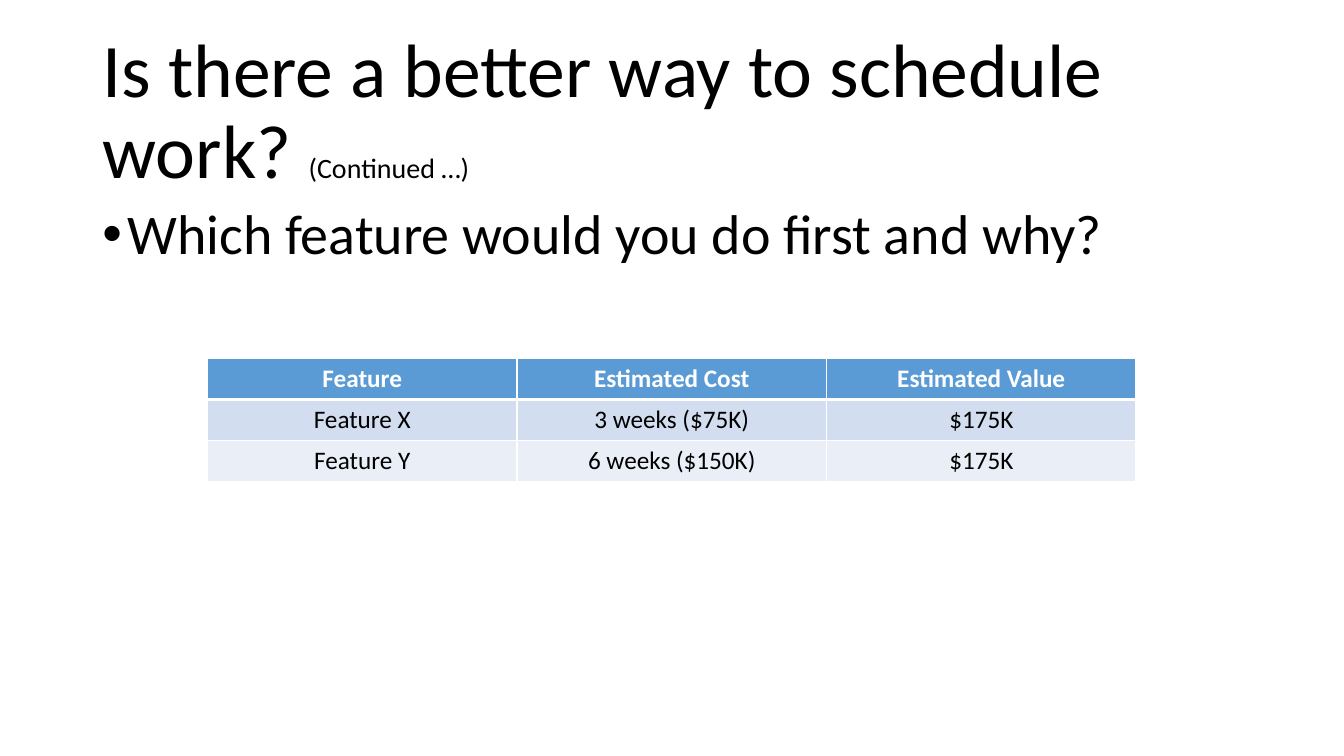
from lxml import etree
from pptx import Presentation
from pptx.dml.color import RGBColor
from pptx.enum.text import MSO_ANCHOR, MSO_AUTO_SIZE, PP_ALIGN
from pptx.oxml.ns import qn
from pptx.util import Cm, Pt

LEFT, CENTER = PP_ALIGN.LEFT, PP_ALIGN.CENTER
TOP, MIDDLE = MSO_ANCHOR.TOP, MSO_ANCHOR.MIDDLE
NO_AUTOFIT = MSO_AUTO_SIZE.NONE

FONT = "Calibri"
COLORS = {
    "text": "000000",
    "white": "FFFFFF",
    "header": "5B9BD5",
    "odd_row": "D2DEEF",
    "even_row": "EAEFF7",
}
FEATURES = [
    ["Feature", "Estimated Cost", "Estimated Value"],
    ["Feature X", "3 weeks ($75K)", "$175K"],
    ["Feature Y", "6 weeks ($150K)", "$175K"],
]


def color(name):
    return RGBColor.from_string(COLORS[name])


def add_text(paragraph, text, size=18, fill="text", bold=False, align=LEFT, spacing=None):
    """Append a formatted run to a paragraph."""
    paragraph.alignment = align
    if spacing:
        paragraph.line_spacing = spacing
    run = paragraph.add_run()
    run.text = text
    run.font.name = FONT
    run.font.size = Pt(size)
    run.font.bold = bold
    run.font.color.rgb = color(fill)


def add_bullet(paragraph, indent):
    properties = paragraph._p.get_or_add_pPr()
    properties.set("marL", str(indent))
    properties.set("indent", str(-indent))
    etree.SubElement(properties, qn("a:buFont"), typeface="Arial")
    etree.SubElement(properties, qn("a:buChar"), char="•")


def set_borders(cell, widths):
    """Draw white cell borders; widths maps each side to points."""
    properties = cell._tc.get_or_add_tcPr()
    for side, width in widths.items():
        line = etree.SubElement(properties, qn(f"a:ln{side}"), w=str(Pt(width)))
        fill = etree.SubElement(line, qn("a:solidFill"))
        etree.SubElement(fill, qn("a:srgbClr"), val=COLORS["white"])


class SlideBuilder:
    def __init__(self, presentation):
        self.slide = presentation.slides.add_slide(presentation.slide_layouts[5])
        background = self.slide.background.fill
        background.solid()
        background.fore_color.rgb = color("white")

    def prepare_frame(self, shape, anchor):
        frame = shape.text_frame
        frame.word_wrap = True
        frame.auto_size = NO_AUTOFIT
        frame.vertical_anchor = anchor
        return frame.paragraphs[0]

    def title(self, text, note, left, top, width, height):
        shape = self.slide.shapes.title
        shape.left, shape.top = Cm(left), Cm(top)
        shape.width, shape.height = Cm(width), Cm(height)
        paragraph = self.prepare_frame(shape, MIDDLE)
        add_text(paragraph, text, size=54, spacing=0.9)
        add_text(paragraph, note, size=20, spacing=0.9)

    def bullet(self, text, left, top, width, height):
        shape = self.slide.shapes.add_textbox(Cm(left), Cm(top), Cm(width), Cm(height))
        paragraph = self.prepare_frame(shape, TOP)
        paragraph.line_spacing = 0.9
        add_bullet(paragraph, Cm(0.64))
        add_text(paragraph, text, size=40)

    def table(self, rows, left, top, column_width, row_height):
        row_count, column_count = len(rows), len(rows[0])
        table = self.slide.shapes.add_table(
            row_count, column_count, Cm(left), Cm(top),
            Cm(column_width * column_count), Cm(row_height * row_count)).table
        for row_index, values in enumerate(rows):
            table.rows[row_index].height = Cm(row_height)
            header = row_index == 0
            fill = "header" if header else "odd_row" if row_index % 2 else "even_row"
            widths = {"L": 1, "R": 1, "T": 3 if row_index == 1 else 1, "B": 3 if header else 1}
            for column_index, value in enumerate(values):
                cell = table.cell(row_index, column_index)
                set_borders(cell, widths)
                cell.fill.solid()
                cell.fill.fore_color.rgb = color(fill)
                add_text(cell.text_frame.paragraphs[0], value, bold=header,
                         fill="white" if header else "text", align=CENTER)


def main():
    presentation = Presentation()
    presentation.slide_width, presentation.slide_height = Cm(33.87), Cm(19.05)
    builder = SlideBuilder(presentation)

    # Title and question
    builder.title("Is there a better way to schedule work? ", "(Continued …)",
                  2.33, 1.02, 29.21, 3.68)
    builder.bullet("Which feature would you do first and why?", 2.33, 5.08, 29.21, 11.02)

    # Feature comparison
    builder.table(FEATURES, 5.23, 9.04, column_width=7.8, row_height=1.03)

    presentation.save("out.pptx")


if __name__ == "__main__":
    main()
